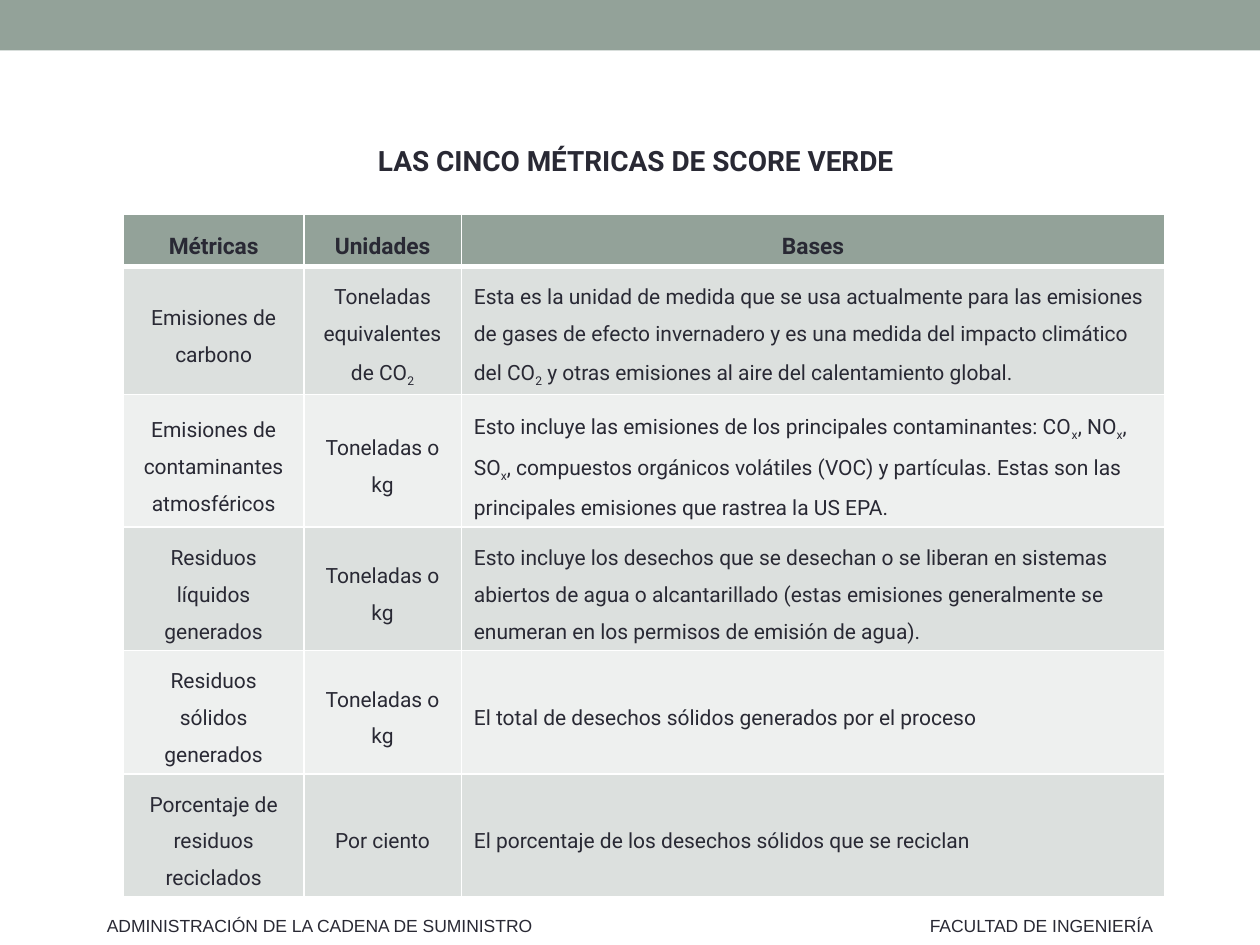
from dataclasses import dataclass

import pptx
import pptx.dml.color
import pptx.enum.shapes
import pptx.enum.text
import pptx.oxml
import pptx.oxml.ns
import pptx.util

Pt = pptx.util.Pt
RGBColor = pptx.dml.color.RGBColor
Align = pptx.enum.text.PP_ALIGN
Anchor = pptx.enum.text.MSO_ANCHOR

SAGE = RGBColor(0x93, 0xA2, 0x99)
INK = RGBColor(0x29, 0x29, 0x34)
WHITE = RGBColor(0xFF, 0xFF, 0xFF)
BANDS = (RGBColor(0xDC, 0xE0, 0xDE), RGBColor(0xEE, 0xF0, 0xEF))

COLUMN_WIDTHS = (103, 90, 402)
HEADER_HEIGHT = 29.5
ROW_HEIGHT = 70
THIN, THICK = 1, 3


@dataclass(frozen=True)
class Metric:
    name: str
    unit: str
    basis: str


@dataclass(frozen=True)
class Footer:
    text: str
    left: float
    width: float


# Text between tildes is set as a subscript.
METRICS = (
    Metric("Emisiones de carbono", "Toneladas equivalentes de CO~2~",
           "Esta es la unidad de medida que se usa actualmente para las emisiones de gases de "
           "efecto invernadero y es una medida del impacto climático del CO~2~ y otras "
           "emisiones al aire del calentamiento global."),
    Metric("Emisiones de contaminantes atmosféricos", "Toneladas o kg",
           "Esto incluye las emisiones de los principales contaminantes: CO~x~, NO~x~, SO~x~, "
           "compuestos orgánicos volátiles (VOC) y partículas. Estas son las principales "
           "emisiones que rastrea la US EPA."),
    Metric("Residuos líquidos generados", "Toneladas o kg",
           "Esto incluye los desechos que se desechan o se liberan en sistemas abiertos de agua "
           "o alcantarillado (estas emisiones generalmente se enumeran en los permisos de "
           "emisión de agua)."),
    Metric("Residuos sólidos generados", "Toneladas o kg",
           "El total de desechos sólidos generados por el proceso"),
    Metric("Porcentaje de residuos reciclados", "Por ciento",
           "El porcentaje de los desechos sólidos que se reciclan"),
)
HEADER = Metric("Métricas", "Unidades", "Bases")
FOOTERS = (
    Footer("ADMINISTRACIÓN DE LA CADENA DE SUMINISTRO", 54, 261.4),
    Footer("FACULTAD DE INGENIERÍA", 524.2, 145.4),
)


def write_text(text_frame, text: str, *, size: float, font: str = "Roboto", bold: bool = False,
               align=Align.LEFT, line_spacing: float = 1.0, space_after: float = 0) -> None:
    """Fill the first paragraph, setting tilde-enclosed parts as subscripts."""
    paragraph = text_frame.paragraphs[0]
    paragraph.alignment = align
    paragraph.line_spacing = line_spacing
    paragraph.space_after = Pt(space_after)
    for index, part in enumerate(text.split("~")):
        run = paragraph.add_run()
        run.text = part
        run.font.name = font
        run.font.size = Pt(size)
        run.font.bold = bold
        run.font.color.rgb = INK
        if index % 2:
            run.font._element.set("baseline", "-25000")


def set_borders(cell, *, top: float, bottom: float) -> None:
    properties = cell._tc.get_or_add_tcPr()
    for side, width in (("L", THIN), ("R", THIN), ("T", top), ("B", bottom)):
        properties.append(pptx.oxml.parse_xml(
            f'<a:ln{side} {pptx.oxml.ns.nsdecls("a")} w="{Pt(width)}">'
            f'<a:solidFill><a:srgbClr val="{WHITE}"/></a:solidFill></a:ln{side}>'))


def add_bar(slide, width: int) -> None:
    bar = slide.shapes.add_shape(pptx.enum.shapes.MSO_SHAPE.RECTANGLE, 0, 0, width, Pt(28.8))
    bar.shadow.inherit = False
    bar.fill.solid()
    bar.fill.fore_color.rgb = SAGE
    bar.line.fill.background()


def add_metric_table(slide) -> None:
    rows = (HEADER, *METRICS)
    table = slide.shapes.add_table(
        len(rows), len(COLUMN_WIDTHS), Pt(70.6), Pt(122.4), Pt(sum(COLUMN_WIDTHS)),
        Pt(HEADER_HEIGHT + ROW_HEIGHT * len(METRICS))).table
    for column, width in zip(table.columns, COLUMN_WIDTHS):
        column.width = Pt(width)
    for row_index, metric in enumerate(rows):
        is_header = row_index == 0
        table.rows[row_index].height = Pt(HEADER_HEIGHT if is_header else ROW_HEIGHT)
        for column_index, text in enumerate((metric.name, metric.unit, metric.basis)):
            cell = table.cell(row_index, column_index)
            set_borders(cell, top=THICK if row_index == 1 else THIN,
                        bottom=THICK if is_header else THIN)
            cell.fill.solid()
            cell.fill.fore_color.rgb = SAGE if is_header else BANDS[(row_index - 1) % 2]
            cell.vertical_anchor = Anchor.TOP if is_header else Anchor.MIDDLE
            centred = is_header or column_index < 2
            write_text(cell.text_frame, text, size=13 if is_header else 12, bold=is_header,
                       align=Align.CENTER if centred else Align.LEFT, line_spacing=1.5)


def add_title(slide) -> None:
    title = slide.shapes.title
    title.left, title.top, title.width, title.height = Pt(59.8), Pt(69.1), Pt(607), Pt(433.4)
    title.text_frame.auto_size = pptx.enum.text.MSO_AUTO_SIZE.NONE
    title.text_frame.vertical_anchor = Anchor.TOP
    write_text(title.text_frame, "LAS CINCO MÉTRICAS DE SCORE VERDE", size=16, bold=True,
               align=Align.CENTER, line_spacing=1.5, space_after=12)


def add_footer(slide, footer: Footer) -> None:
    box = slide.shapes.add_textbox(Pt(footer.left), Pt(519.1), Pt(footer.width), Pt(19.4))
    box.text_frame.word_wrap = False
    box.text_frame.auto_size = pptx.enum.text.MSO_AUTO_SIZE.SHAPE_TO_FIT_TEXT
    write_text(box.text_frame, footer.text, size=10, font="Arial")


def main() -> None:
    presentation = pptx.Presentation()
    presentation.slide_width, presentation.slide_height = Pt(720), Pt(540)
    slide = presentation.slides.add_slide(presentation.slide_layouts.get_by_name("Title Only"))
    add_bar(slide, presentation.slide_width)
    add_metric_table(slide)
    add_title(slide)
    for footer in FOOTERS:
        add_footer(slide, footer)
    presentation.save("out.pptx")


if __name__ == "__main__":
    main()
